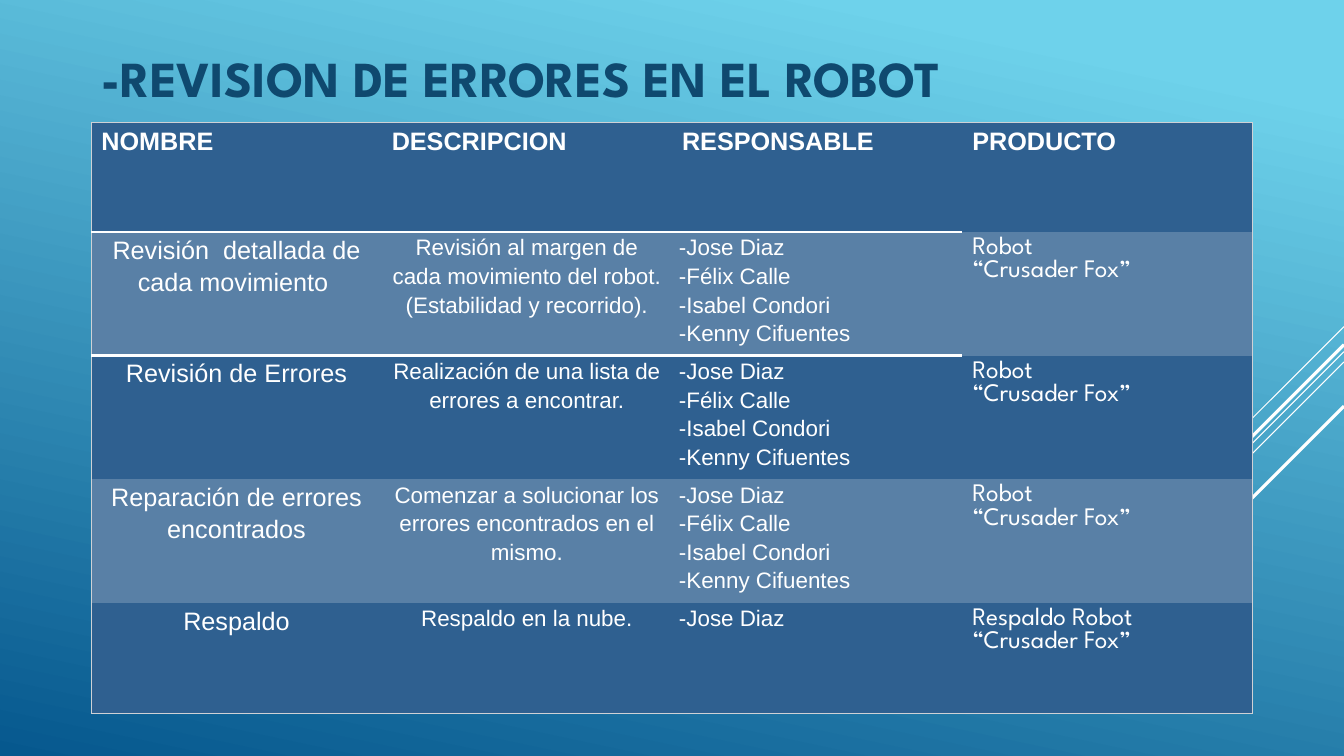
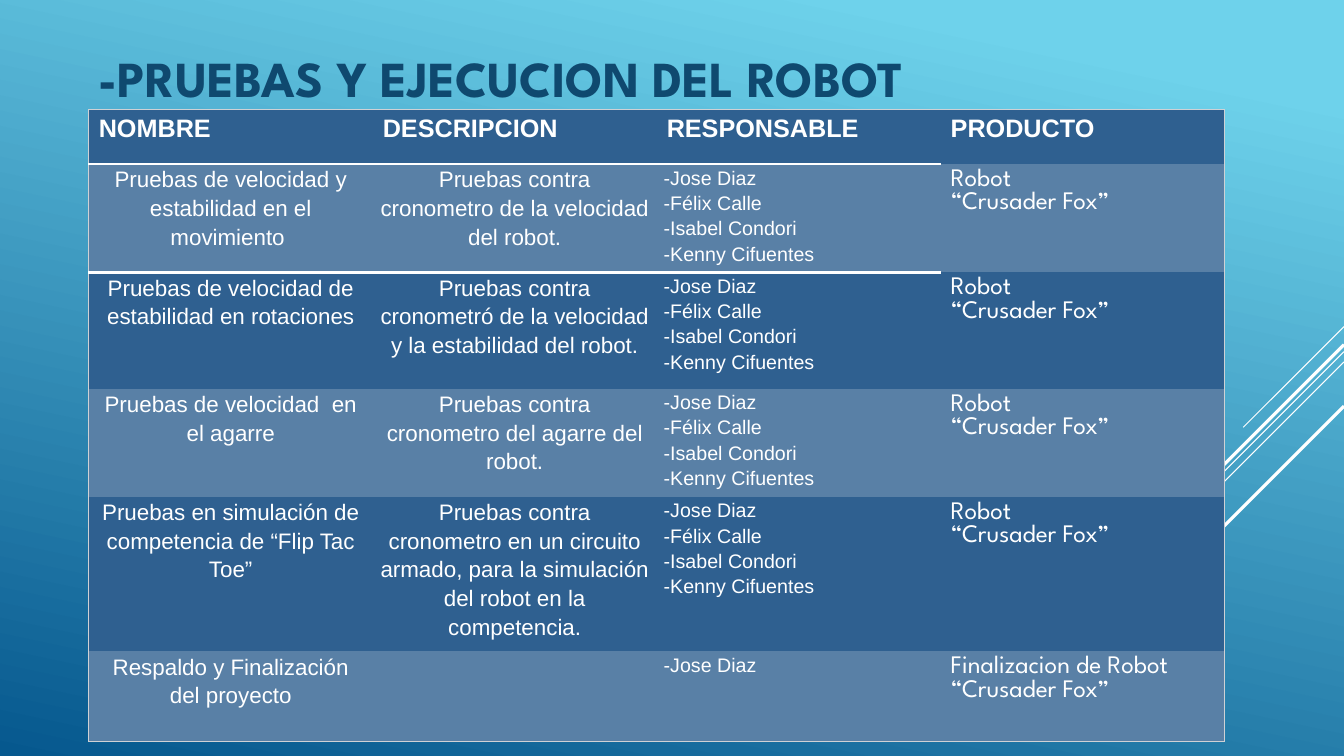
from dataclasses import dataclass
from typing import NamedTuple

from lxml.etree import SubElement
from pptx import Presentation
from pptx.dml.color import RGBColor
from pptx.enum.shapes import MSO_CONNECTOR
from pptx.enum.text import MSO_ANCHOR, PP_ALIGN
from pptx.oxml.ns import qn
from pptx.util import Inches, Pt

WIDTH, HEIGHT = Inches(13.33), Inches(7.5)
WHITE = RGBColor(0xFF, 0xFF, 0xFF)
NAVY = RGBColor(0x0F, 0x49, 0x6F)
SKY = RGBColor(0x6E, 0xD2, 0xEB)
DEEP = RGBColor(0x06, 0x58, 0x8E)
FRAME = RGBColor(0xCF, 0xD1, 0xD5)
DARK_BAND = RGBColor(0x2F, 0x60, 0x90)
LIGHT_BAND = RGBColor(0x59, 0x80, 0xA6)
BODY_FONT, DISPLAY_FONT = "Arial", "League Spartan"
NO_STYLE = "{2D5ABB26-0587-4C30-8999-92F81FD0307C}"

HEADINGS = ("NOMBRE", "DESCRIPCION", "RESPONSABLE", "PRODUCTO")
LEADER = "-Jose Diaz"
TEAM = f"{LEADER}\n-Félix Calle\n-Isabel Condori\n-Kenny Cifuentes"
ROBOT = "“Crusader Fox”"


class Stripe(NamedTuple):
    top: float
    reach: float
    weight: float


STRIPES = (
    Stripe(43.2, 7.5, 0.75),
    Stripe(46.53, 24.45, 0.75),
    Stripe(47.87, 15.53, 0.75),
    Stripe(45.6, 14.33, 2.25),
    Stripe(53.73, 10.43, 2.25),
)


@dataclass(frozen=True)
class CellStyle:
    size: float
    font: str = BODY_FONT
    bold: bool = False
    align: PP_ALIGN = PP_ALIGN.LEFT
    spacing: float = 1.0
    inset_x: float = 0.1
    inset_y: float = 0.05


def tight(size: float, align: PP_ALIGN) -> CellStyle:
    return CellStyle(size, align=align, spacing=1.15, inset_x=0.07, inset_y=0)


HEADING = CellStyle(18, bold=True)
PRODUCT = CellStyle(18, DISPLAY_FONT)
ROOMY_NAME = CellStyle(18, align=PP_ALIGN.CENTER)


@dataclass(frozen=True)
class Task:
    height: float
    name: str
    description: str
    people: str = TEAM
    product: str = "Robot"
    roomy: bool = False


@dataclass(frozen=True)
class TablePage:
    title: str
    left: float
    top: float
    column: float
    heading_height: float
    name_size: float
    people_size: float
    tasks: tuple[Task, ...]


PAGES = (
    TablePage("-REVISION DE ERRORES EN EL ROBOT", 6.8, 16.2, 21.6, 14.5, 18, 16, (
        Task(14.5, "Revisión  detallada de cada movimiento ",
             "Revisión al margen de cada movimiento del robot.(Estabilidad y recorrido)."),
        Task(14.5, "Revisión de Errores", "Realización de una lista de errores a encontrar."),
        Task(14.5, "Reparación de errores encontrados",
             "Comenzar a solucionar los errores encontrados en el mismo."),
        Task(14.6, "Respaldo", "Respaldo en la nube.", LEADER, "Respaldo Robot", True),
    )),
    TablePage("-PRUEBAS Y EJECUCION DEL ROBOT", 6.6, 14.5, 21.13, 7.2, 16, 14, (
        Task(13.5, "Pruebas de velocidad y estabilidad en el movimiento ",
             "Pruebas contra cronometro de la velocidad del robot."),
        Task(15.4, "Pruebas de velocidad de estabilidad en rotaciones",
             "Pruebas contra cronometró de la velocidad y la estabilidad del robot."),
        Task(13.5, "Pruebas de velocidad  en el agarre",
             "Pruebas contra cronometro del agarre del robot."),
        Task(19.3, "Pruebas en simulación de competencia de “Flip Tac Toe”",
             "Pruebas contra cronometro en un circuito armado, "
             "para la simulación del robot en la competencia."),
        Task(12, "Respaldo y Finalización del proyecto", "", LEADER, "Finalizacion de Robot"),
    )),
)


def across(percent: float) -> int:
    return round(WIDTH * percent / 100)


def down(percent: float) -> int:
    return round(HEIGHT * percent / 100)


def add_span(para, text: str, font: str, size: float, color: RGBColor, bold: bool) -> None:
    span = para.add_run()
    span.text = text
    span.font.name = font
    span.font.size = Pt(size)
    span.font.bold = bold
    span.font.color.rgb = color


def paint_background(deck) -> None:
    fill = deck.slide_master.background.fill
    fill.gradient()
    fill.gradient_angle = 258
    for stop, color, position in zip(fill.gradient_stops, (SKY, DEEP), (0.1, 1.0)):
        stop.color.rgb = color
        stop.position = position


def draw_stripes(page) -> None:
    for stripe in STRIPES:
        reach, top = across(stripe.reach), down(stripe.top)
        line = page.shapes.add_connector(
            MSO_CONNECTOR.STRAIGHT, WIDTH, top, WIDTH - reach, top + reach)
        line.line.color.rgb = WHITE
        line.line.width = Pt(stripe.weight)
        SubElement(line._element.spPr, qn("a:effectLst"))


def draw_title(page, text: str, left: float) -> None:
    box = page.shapes.add_textbox(across(left), 0, across(81.25), down(21.6))
    frame = box.text_frame
    frame.word_wrap = True
    frame.vertical_anchor = MSO_ANCHOR.MIDDLE
    para = frame.paragraphs[0]
    para.line_spacing = 0.9
    add_span(para, text, DISPLAY_FONT, 36, NAVY, True)


def add_border(cell, side: str, color: RGBColor, weight: float, opacity: int) -> None:
    line = SubElement(cell._tc.get_or_add_tcPr(), qn(f"a:ln{side}"), w=str(Pt(weight)))
    fill = SubElement(line, qn("a:solidFill"))
    tone = SubElement(fill, qn("a:srgbClr"), val=str(color))
    SubElement(tone, qn("a:alpha"), val=str(opacity * 1000))


def draw_borders(cell, row: int, column: int, last_row: int) -> None:
    last_column = len(HEADINGS) - 1
    edges = {"L": column == 0, "R": column == last_column, "T": row == 0, "B": row == last_row}
    for side, outer in edges.items():
        if outer:
            add_border(cell, side, FRAME, 0.75, 60)
    if row == 0 and column < last_column:
        add_border(cell, "B", WHITE, 2.25, 100)
    if row == 1 and column < last_column:
        add_border(cell, "T", WHITE, 2.25, 100)


def write_cell(cell, text: str, style: CellStyle, keep_together: bool) -> None:
    cell.margin_left = cell.margin_right = Inches(style.inset_x)
    cell.margin_top = cell.margin_bottom = Inches(style.inset_y)
    para = cell.text_frame.paragraphs[0]
    for index, line in enumerate(text.split("\n") if text else ()):
        if index and keep_together:
            para.add_line_break()
        elif index:
            para = cell.text_frame.add_paragraph()
        para.alignment = style.align
        para.line_spacing = style.spacing
        add_span(para, line, style.font, style.size, WHITE, style.bold)


def draw_table(page, content: TablePage) -> None:
    heights = [content.heading_height, *(task.height for task in content.tasks)]
    shape = page.shapes.add_table(
        len(heights), len(HEADINGS), across(content.left), down(content.top),
        across(content.column * len(HEADINGS)), down(sum(heights)))
    table = shape.table
    table.first_row = table.horz_banding = False
    table._tbl.tblPr.find(qn("a:tableStyleId")).text = NO_STYLE
    for column in table.columns:
        column.width = across(content.column)
    for row, height in zip(table.rows, heights):
        row.height = down(height)

    name_style = tight(content.name_size, PP_ALIGN.CENTER)
    description_style = tight(16, PP_ALIGN.CENTER)
    people_style = tight(content.people_size, PP_ALIGN.LEFT)
    lines = [[(heading, HEADING) for heading in HEADINGS]]
    for task in content.tasks:
        lines.append([
            (task.name, ROOMY_NAME if task.roomy else name_style),
            (task.description, description_style),
            (task.people, people_style),
            (f"{task.product}\n{ROBOT}", PRODUCT),
        ])
    for row, line in enumerate(lines):
        for column, (text, style) in enumerate(line):
            cell = table.cell(row, column)
            draw_borders(cell, row, column, len(lines) - 1)
            cell.fill.solid()
            cell.fill.fore_color.rgb = LIGHT_BAND if row % 2 else DARK_BAND
            write_cell(cell, text, style, style is PRODUCT)


def main() -> None:
    deck = Presentation()
    deck.slide_width, deck.slide_height = WIDTH, HEIGHT
    paint_background(deck)
    for content in PAGES:
        page = deck.slides.add_slide(deck.slide_layouts[6])
        draw_stripes(page)
        draw_title(page, content.title, content.left)
        draw_table(page, content)
    deck.save("out.pptx")


if __name__ == "__main__":
    main()
